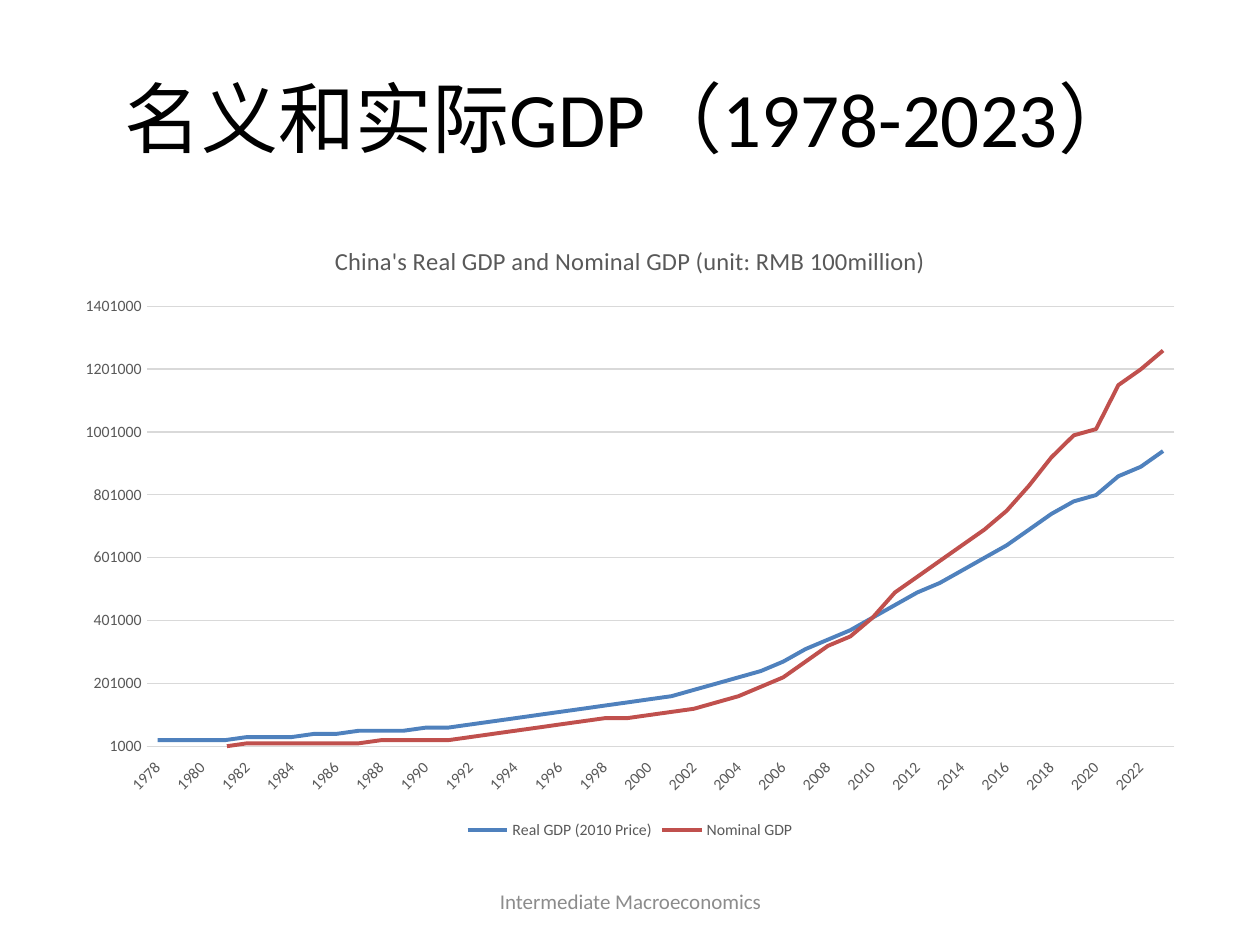
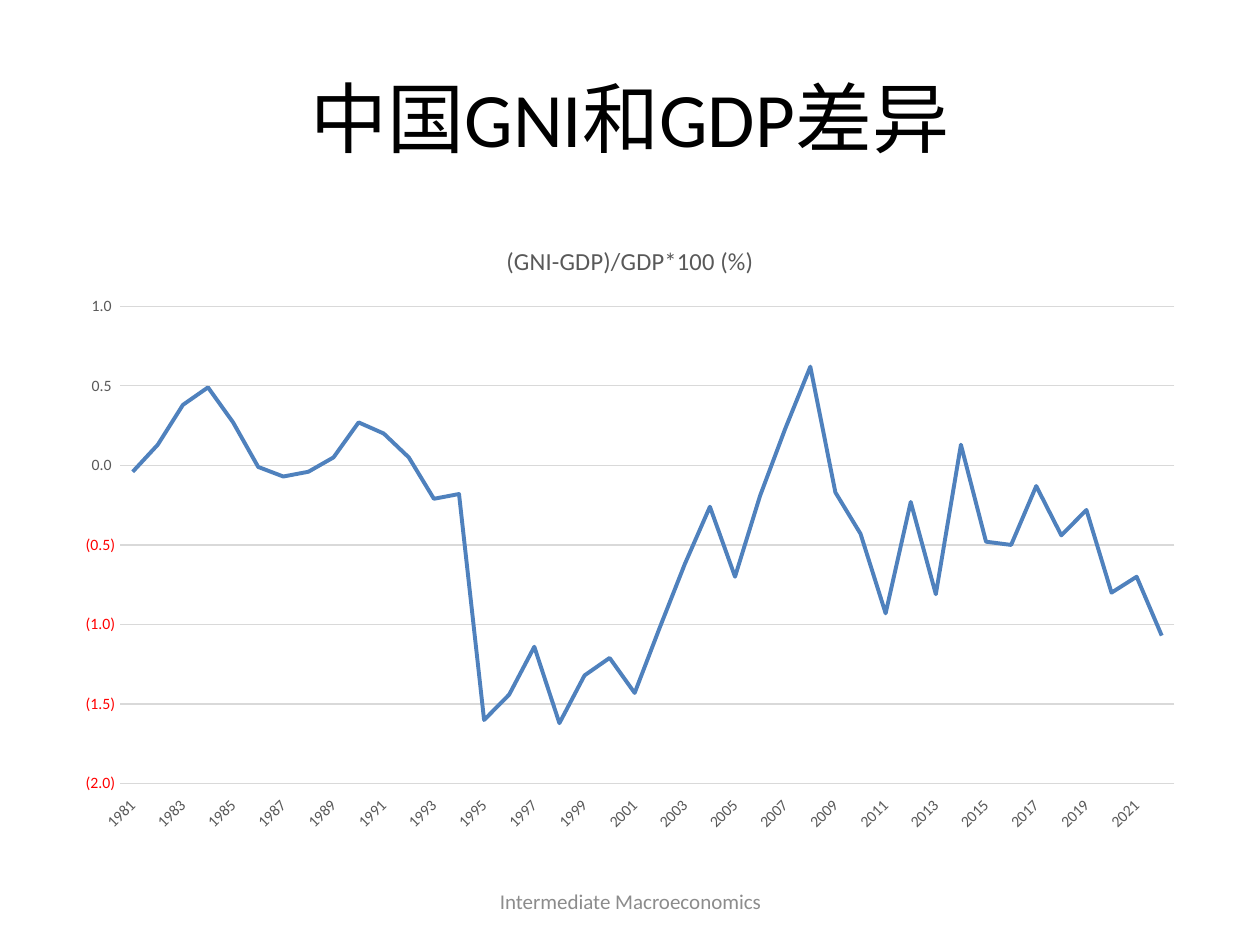
from pptx import Presentation
from pptx import util as u
from pptx.chart.data import CategoryChartData
from pptx.dml.color import RGBColor
from pptx.enum import chart as charts, text

FONT = "Calibri"
BLACK, DARK_GRAY, FOOTER_GRAY, GRID_GRAY = "000000", "595959", "8C8C8C", "D9D9D9"
SERIES_COLORS = ["4F81BD", "C0504D"]
FOOTER = "Intermediate Macroeconomics"
TITLE_BOX = (0.5, 0.3, 9, 1.25)
CHART_BOX = (0.5, 1.75, 9, 4.95)
FOOTER_BOX = (3.42, 6.95, 3.17, 0.4)
TITLE_ONLY = 5

# GDP in units of 10000 x RMB 100 million
REAL_GDP = [
    2, 2, 2, 2, 3, 3, 3, 4, 4, 5, 5, 5, 6, 6, 7, 8, 9, 10, 11, 12, 13, 14, 15,
    16, 18, 20, 22, 24, 27, 31, 34, 37, 41, 45, 49, 52, 56, 60, 64, 69, 74, 78,
    80, 86, 89, 94,
]
NOMINAL_GDP = [
    0, 0, 0, 0, 1, 1, 1, 1, 1, 1, 2, 2, 2, 2, 3, 4, 5, 6, 7, 8, 9, 9, 10,
    11, 12, 14, 16, 19, 22, 27, 32, 35, 41, 49, 54, 59, 64, 69, 75, 83, 92, 99,
    101, 115, 120, 126,
]
GNI_GAP = [
    -0.04, 0.13, 0.38, 0.49, 0.27, -0.01, -0.07, -0.04, 0.05, 0.27, 0.2, 0.05,
    -0.21, -0.18, -1.6, -1.44, -1.14, -1.62, -1.32, -1.21, -1.43, -1.02, -0.62,
    -0.26, -0.7, -0.19, 0.23, 0.62, -0.17, -0.43, -0.93, -0.23, -0.81, 0.13,
    -0.48, -0.5, -0.13, -0.44, -0.28, -0.8, -0.7, -1.07,
]

SLIDES = [
    {
        "title": "名义和实际GDP（1978-2023）",
        "chart_title": "China's Real GDP and Nominal GDP (unit: RMB 100million)",
        "first_year": 1978,
        "series": {
            "Real GDP (2010 Price)": [value * 10000 for value in REAL_GDP],
            "Nominal GDP": [value * 10000 for value in NOMINAL_GDP],
        },
        "scale": (1000, 1401000, 200000),
        "number_format": "General",
    },
    {
        "title": "中国GNI和GDP差异",
        "chart_title": "(GNI-GDP)/GDP*100 (%)",
        "first_year": 1981,
        "series": {"Series 1": GNI_GAP},
        "scale": (-2, 1, 0.5),
        "number_format": r"#,##0.0_);[Red]\(#,##0.0\)",
    },
]


def rgb(color):
    return RGBColor.from_string(color)


def inches(box):
    return [u.Inches(length) for length in box]


def set_font(font, size, color):
    font.name, font.size, font.bold = FONT, u.Pt(size), False
    font.color.rgb = rgb(color)


def set_line(line, color, width):
    line.color.rgb = rgb(color)
    line.width = u.Pt(width)


def write_centered(shape, words, size, color):
    frame = shape.text_frame
    frame.word_wrap = True
    frame.auto_size = text.MSO_AUTO_SIZE.NONE
    frame.vertical_anchor = text.MSO_ANCHOR.MIDDLE
    paragraph = frame.paragraphs[0]
    paragraph.text = words
    paragraph.alignment = text.PP_ALIGN.CENTER
    set_font(paragraph.font, size, color)


def format_axes(chart, scale, number_format):
    years, values = chart.category_axis, chart.value_axis
    for axis in (years, values):
        axis.major_tick_mark = axis.minor_tick_mark = charts.XL_TICK_MARK.NONE
        set_font(axis.tick_labels.font, 9, DARK_GRAY)
    years.tick_label_position = charts.XL_TICK_LABEL_POSITION.LOW
    set_line(years.format.line, GRID_GRAY, 0.75)
    # Slant the year labels by 45 degrees
    years._element.txPr.bodyPr.set("rot", "-2700000")

    values.minimum_scale, values.maximum_scale, values.major_unit = scale
    values.format.line.fill.background()
    set_line(values.major_gridlines.format.line, GRID_GRAY, 0.75)
    values.tick_labels.number_format = number_format
    values.tick_labels.number_format_is_linked = False


def add_line_chart(slide, content):
    data = CategoryChartData()
    year_count = len(next(iter(content["series"].values())))
    first_year = content["first_year"]
    data.categories = [str(first_year + index) for index in range(year_count)]
    for name, values in content["series"].items():
        data.add_series(name, values)
    chart = slide.shapes.add_chart(
        charts.XL_CHART_TYPE.LINE, *inches(CHART_BOX), data
    ).chart
    set_font(chart.font, 10, BLACK)

    chart.has_title = True
    chart.chart_title.include_in_layout = False
    paragraph = chart.chart_title.text_frame.paragraphs[0]
    paragraph.text = content["chart_title"]
    set_font(paragraph.font, 14, DARK_GRAY)

    chart.has_legend = len(content["series"]) > 1
    if chart.has_legend:
        chart.legend.position = charts.XL_LEGEND_POSITION.BOTTOM
        chart.legend.include_in_layout = False
        set_font(chart.legend.font, 9, DARK_GRAY)

    format_axes(chart, content["scale"], content["number_format"])
    plot = chart.plots[0]
    plot.vary_by_categories = False
    for series, color in zip(plot.series, SERIES_COLORS):
        series.smooth = False
        series.marker.style = charts.XL_MARKER_STYLE.NONE
        set_line(series.format.line, color, 2.25)


def add_slide(presentation, content):
    slide = presentation.slides.add_slide(presentation.slide_layouts[TITLE_ONLY])
    title = slide.shapes.title
    title.left, title.top, title.width, title.height = inches(TITLE_BOX)
    write_centered(title, content["title"], 44, BLACK)
    footer = slide.shapes.add_textbox(*inches(FOOTER_BOX))
    write_centered(footer, FOOTER, 12, FOOTER_GRAY)
    add_line_chart(slide, content)


def main():
    presentation = Presentation()
    presentation.slide_width, presentation.slide_height = inches((10, 7.5))
    for content in SLIDES:
        add_slide(presentation, content)
    presentation.save("out.pptx")


if __name__ == "__main__":
    main()
